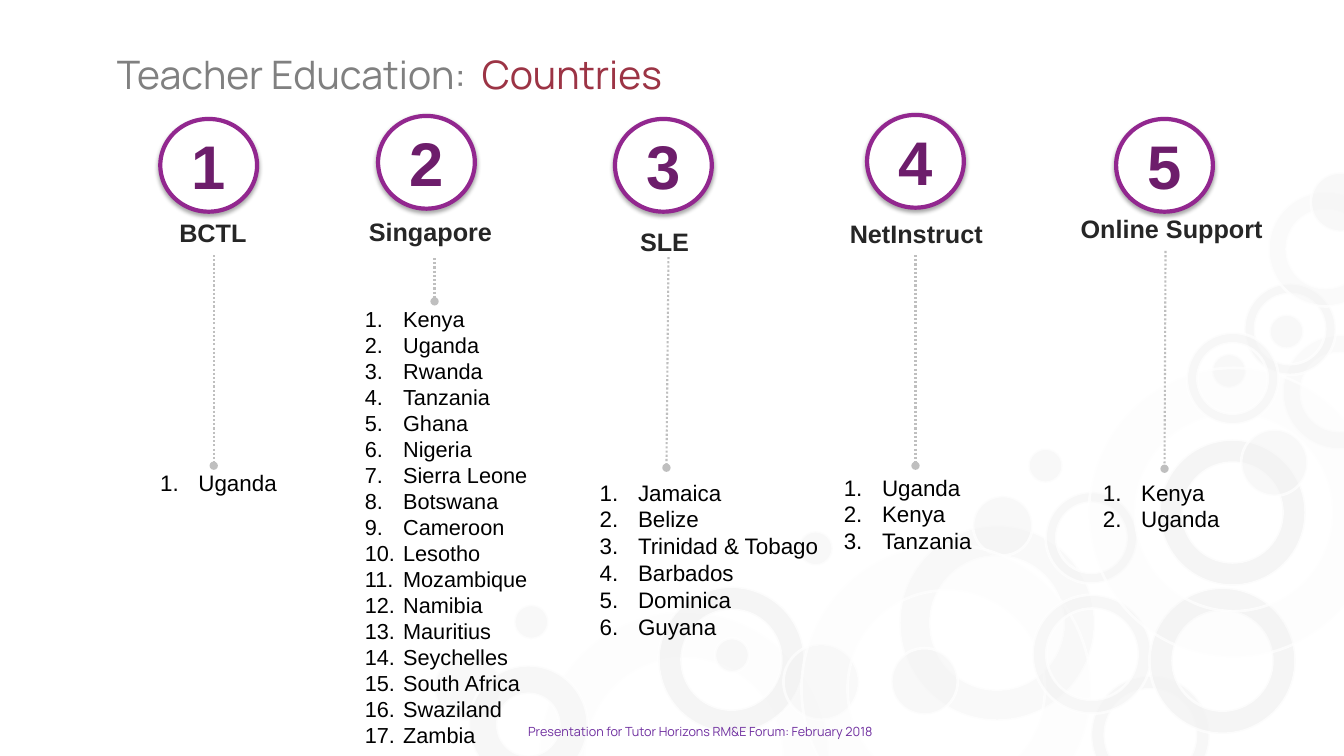
from dataclasses import dataclass

from lxml import etree
from pptx import Presentation
from pptx.dml.color import RGBColor
from pptx.enum.dml import MSO_LINE
from pptx.enum.shapes import MSO_CONNECTOR, MSO_SHAPE
from pptx.enum.text import MSO_ANCHOR, MSO_AUTO_SIZE, PP_ALIGN
from pptx.oxml.ns import qn
from pptx.util import Pt

PX = 9144  # EMU; 100 px to the inch
WIDTH, HEIGHT = 1333, 750

OVAL, DONUT = MSO_SHAPE.OVAL, MSO_SHAPE.DONUT
STRAIGHT, DOTTED = MSO_CONNECTOR.STRAIGHT, MSO_LINE.ROUND_DOT
LEFT, CENTER = PP_ALIGN.LEFT, PP_ALIGN.CENTER
TOP, MIDDLE = MSO_ANCHOR.TOP, MSO_ANCHOR.MIDDLE
NO_AUTOFIT = MSO_AUTO_SIZE.NONE

WHITE = RGBColor(0xFF, 0xFF, 0xFF)
BLACK = RGBColor(0x00, 0x00, 0x00)
PALE = RGBColor(0xF2, 0xF2, 0xF2)
DOT_GREY = RGBColor(0xBF, 0xBF, 0xBF)
TITLE_GREY = RGBColor(0x80, 0x80, 0x80)
TITLE_RED = RGBColor(0x9C, 0x34, 0x45)
LABEL_GREY = RGBColor(0x26, 0x26, 0x26)
RING_PURPLE = RGBColor(0x92, 0x27, 0x8F)
NUMBER_PURPLE = RGBColor(0x6D, 0x1D, 0x6B)
FOOTER_PURPLE = RGBColor(0x70, 0x30, 0xA0)

BODY_FONT, HEAD_FONT = "Arial", "Manrope"
BADGE_W, BADGE_H = 96, 92
LIST_INDENT = 38


@dataclass(frozen=True)
class Bubble:
    """A background circle; hole is the donut's ring thickness, 0 for a disc."""
    x: int
    y: int
    size: int
    opacity: int
    hole: float = 0


@dataclass(frozen=True)
class Box:
    x: int
    y: int
    w: int
    h: int


@dataclass(frozen=True)
class Programme:
    name: str
    badge: tuple[int, int]
    label: Box
    stem: tuple[int, int, int, int]
    list_box: Box
    countries: tuple[str, ...]
    list_size: float = 16


BUBBLES = (
    Bubble(1150, 436, 145, 75, 0.159), Bubble(1272, 332, 114, 31, 0.159),
    Bubble(535, 607, 287, 13, 0.159), Bubble(1082, 670, 118, 54, 0.117),
    Bubble(1234, 281, 91, 54, 0.117), Bubble(1231, 426, 66, 47),
    Bubble(1202, 351, 34, 47), Bubble(892, 521, 194, 42, 0.159),
    Bubble(653, 582, 145, 75, 0.159), Bubble(777, 639, 75, 39),
    Bubble(965, 492, 59, 47), Bubble(795, 540, 287, 13, 0.159),
    Bubble(1024, 590, 118, 54, 0.117), Bubble(1037, 488, 91, 54, 0.117),
    Bubble(792, 527, 34, 47), Bubble(431, 649, 66, 47),
    Bubble(709, 633, 34, 47), Bubble(1020, 445, 34, 47),
    Bubble(1140, 583, 145, 75, 0.159), Bubble(1258, 190, 114, 31, 0.159),
    Bubble(1300, 171, 59, 47), Bubble(1080, 365, 287, 13, 0.159),
    Bubble(1177, 330, 91, 54, 0.117), Bubble(465, 660, 118, 54, 0.24),
    Bubble(1259, 312, 34, 47), Bubble(884, 643, 66, 47),
    Bubble(510, 600, 34, 47),
)

PROGRAMMES = (
    Programme("BCTL", (159, 118), Box(168, 211, 89, 40), (212, 253, 212, 462),
              Box(149, 461, 177, 37), ("Uganda",)),
    Programme("Singapore", (375, 115), Box(356, 210, 162, 40), (431, 256, 431, 299),
              Box(352, 298, 209, 468),
              ("Kenya", "Uganda", "Rwanda", "Tanzania", "Ghana", "Nigeria",
               "Sierra Leone", "Botswana", "Cameroon", "Lesotho", "Mozambique",
               "Namibia", "Mauritius", "Seychelles", "South Africa", "Swaziland",
               "Zambia"), 15.5),
    Programme("SLE", (610, 118), Box(625, 220, 72, 40), (663, 255, 661, 464),
              Box(585, 470, 244, 172),
              ("Jamaica", "Belize", "Trinidad & Tobago", "Barbados", "Dominica",
               "Guyana")),
    Programme("NetInstruct", (860, 114), Box(833, 212, 189, 40), (908, 253, 908, 462),
              Box(827, 465, 268, 91), ("Uganda", "Kenya", "Tanzania")),
    Programme("Online Support", (1107, 118), Box(1062, 207, 210, 40),
              (1156, 249, 1155, 465), Box(1084, 470, 208, 64), ("Kenya", "Uganda")),
)


def place(sp, box: Box) -> None:
    sp.left, sp.top, sp.width, sp.height = (v * PX for v in (box.x, box.y, box.w, box.h))


def style(p, size: float, color: RGBColor, font: str = BODY_FONT,
          bold: bool = False, align=LEFT) -> None:
    p.alignment = align
    p.font.name, p.font.size, p.font.bold = font, Pt(size), bold
    p.font.color.rgb = color


def add_circle(slide, preset, box: Box, fill: RGBColor, line: RGBColor, width: float):
    sp = slide.shapes.add_shape(preset, *(v * PX for v in (box.x, box.y, box.w, box.h)))
    sp.shadow.inherit = False
    sp.fill.solid()
    sp.fill.fore_color.rgb = fill
    sp.line.color.rgb = line
    sp.line.width = Pt(width)
    return sp


def add_bubble(slide, bubble: Bubble) -> None:
    box = Box(bubble.x, bubble.y, bubble.size, bubble.size)
    sp = add_circle(slide, DONUT if bubble.hole else OVAL, box, PALE, WHITE, 2)
    if bubble.hole:
        sp.adjustments[0] = bubble.hole
    colors = sp._element.spPr.iter(qn("a:srgbClr"))
    for color, opacity in zip(colors, (bubble.opacity, 70)):
        etree.SubElement(color, qn("a:alpha"), val=str(opacity * 1000))


def add_text(slide, box: Box, lines: tuple[str, ...], size: float, color: RGBColor,
             font: str = BODY_FONT, bold: bool = False, align=LEFT):
    sp = slide.shapes.add_textbox(0, 0, 0, 0)
    place(sp, box)
    tf = sp.text_frame
    tf.word_wrap = True
    tf.text = "\n".join(lines)
    for p in tf.paragraphs:
        style(p, size, color, font, bold, align)
    return tf


def number_paragraphs(tf) -> None:
    for p in tf.paragraphs:
        props = p._p.get_or_add_pPr()
        props.set("marL", str(LIST_INDENT * PX))
        props.set("indent", str(-LIST_INDENT * PX))
        number = etree.Element(qn("a:buAutoNum"), type="arabicPeriod")
        props.insert(0, number)


def add_badge(slide, number: int, x: int, y: int) -> None:
    sp = add_circle(slide, OVAL, Box(x, y, BADGE_W, BADGE_H), WHITE, RING_PURPLE, 3)
    effects = sp._element.spPr.find(qn("a:effectLst"))
    shadow = etree.SubElement(effects, qn("a:outerShdw"), blurRad=str(Pt(3.1)),
                              dist=str(Pt(1.8)), dir="5400000", rotWithShape="0")
    color = etree.SubElement(shadow, qn("a:srgbClr"), val=str(BLACK))
    etree.SubElement(color, qn("a:alpha"), val="35000")
    tf = sp.text_frame
    tf.vertical_anchor = MIDDLE
    tf.text = str(number)
    style(tf.paragraphs[0], 44, NUMBER_PURPLE, bold=True, align=CENTER)


def add_stem(slide, ends: tuple[int, int, int, int]) -> None:
    """Dotted line that ends in a round dot."""
    cxn = slide.shapes.add_connector(STRAIGHT, *(v * PX for v in ends))
    cxn.line.color.rgb = DOT_GREY
    cxn.line.width = Pt(1.5)
    cxn.line.dash_style = DOTTED
    props = cxn._element.spPr
    etree.SubElement(props.find(qn("a:ln")), qn("a:tailEnd"), type="oval")
    etree.SubElement(props, qn("a:effectLst"))


def add_programme(slide, number: int, programme: Programme) -> None:
    add_badge(slide, number, *programme.badge)
    add_text(slide, programme.label, (programme.name,), 18, LABEL_GREY, bold=True)
    add_stem(slide, programme.stem)
    tf = add_text(slide, programme.list_box, programme.countries,
                  programme.list_size, BLACK)
    number_paragraphs(tf)


def set_title(slide) -> None:
    title = slide.shapes.title
    place(title, Box(106, 45, 608, 57))
    tf = title.text_frame
    tf.auto_size, tf.vertical_anchor = NO_AUTOFIT, TOP
    p = tf.paragraphs[0]
    style(p, 28, TITLE_GREY, HEAD_FONT)
    p.add_run().text = "Teacher Education:  "
    r = p.add_run()
    r.text = "Countries"
    r.font.color.rgb = TITLE_RED


def main() -> None:
    prs = Presentation()
    prs.slide_width, prs.slide_height = WIDTH * PX, HEIGHT * PX
    slide = prs.slides.add_slide(prs.slide_layouts[5])
    for bubble in BUBBLES:
        add_bubble(slide, bubble)
    add_text(slide, Box(361, 713, 667, 25),
             ("Presentation for Tutor Horizons RM&E Forum: February 2018",),
             9, FOOTER_PURPLE, HEAD_FONT, align=CENTER)
    set_title(slide)
    for number, programme in enumerate(PROGRAMMES, start=1):
        add_programme(slide, number, programme)
    prs.save("out.pptx")


if __name__ == "__main__":
    main()
